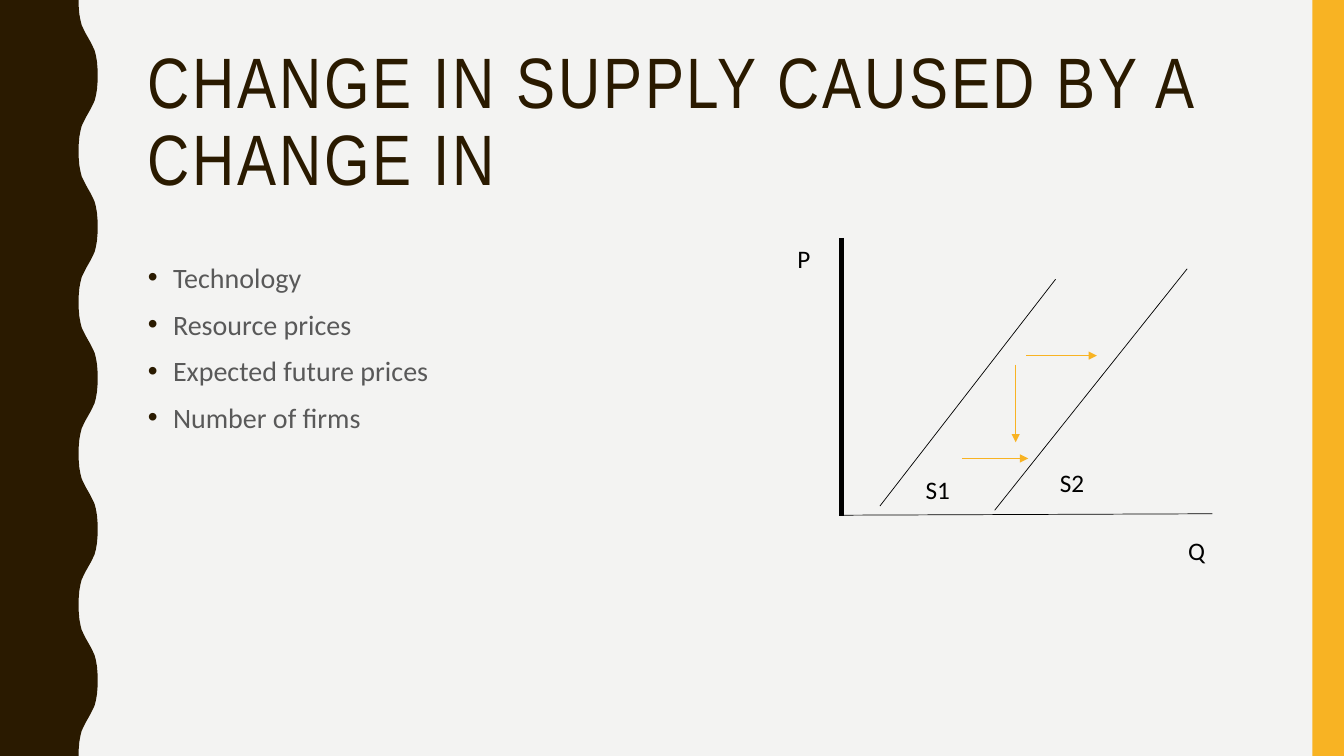
"""Build a slide on the causes of a change in supply, with its graph."""
from dataclasses import dataclass

import pptx
import pptx.dml.color
import pptx.enum.shapes
import pptx.enum.text
import pptx.oxml.ns
import pptx.util
from lxml import etree

Pt = pptx.util.Pt
qn = pptx.oxml.ns.qn
Anchor = pptx.enum.text.MSO_ANCHOR


@dataclass(frozen=True)
class Theme:
    ground: str = "F3F3F2"
    dark: str = "2A1A00"
    gold: str = "F8B323"
    grey: str = "595959"
    black: str = "000000"
    head: str = "Arial Narrow"
    body: str = "Calibri"
    large: int = 51
    mid: int = 20
    small: int = 18
    thin: float = 0.5
    thick: float = 4


THEME = Theme()
WIDTH, HEIGHT = 960, 540
CAUSES = ["Technology", "Resource prices", "Expected future prices",
          "Number of firms"]
LABELS = [("P", 562.5, 170, 24), ("Q", 841.5, 378.5, 27),
          ("S1", 654, 335.5, 32), ("S2", 750, 330.5, 32)]
CURVES = [(848, 192, 710.5, 364.5), (754, 199.5, 628.5, 361.5)]
ARROWS = [(687, 327.5, 734.5, 327.5), (733, 254, 783.5, 254),
          (725.5, 260.5, 725.5, 316)]
BEND = [(56.2, 0), (56.3, 5), (56.7, 10), (57.5, 14.5),
        (58.4, 18), (59.8, 21), (61.3, 24)]


def tint(code):
    """Turn a hex code into a colour."""
    return pptx.dml.color.RGBColor.from_string(code)


def paint(shape, code):
    """Fill a shape with a flat colour, without outline or shadow."""
    shape.shadow.inherit = False
    shape.fill.solid()
    shape.fill.fore_color.rgb = tint(code)
    shape.line.fill.background()


def add_wave(slide):
    """Draw the dark left band with its wavy edge."""
    half = BEND + [(63, 27)] + [(126 - x, 54 - y) for x, y in BEND[::-1]]
    wave = half + [(x, 108 - y) for x, y in half[-2::-1]]
    edge = [(x, y + 108 * turn) for turn in range(5) for x, y in wave]
    pen = slide.shapes.build_freeform(0, 0)
    pen.add_line_segments([(Pt(x), Pt(y)) for x, y in edge + [(0, HEIGHT)]])
    paint(pen.convert_to_shape(), THEME.dark)


def add_bar(slide):
    """Draw the gold bar on the right."""
    kind = pptx.enum.shapes.MSO_SHAPE.RECTANGLE
    bar = slide.shapes.add_shape(kind, Pt(937.5), 0, Pt(22.5), Pt(HEIGHT))
    paint(bar, THEME.gold)


def add_box(slide, left, top, width, height, wrap=True, anchor=Anchor.TOP):
    """Add a text box and return its frame."""
    box = slide.shapes.add_textbox(Pt(left), Pt(top), Pt(width), Pt(height))
    frame = box.text_frame
    frame.word_wrap = wrap
    frame.vertical_anchor = anchor
    return frame


def set_font(para, face, size, code):
    """Set face, size and colour of a paragraph."""
    para.font.name = face
    para.font.size = Pt(size)
    para.font.color.rgb = tint(code)


def add_title(slide, text):
    """Add the spaced title."""
    frame = add_box(slide, 98.5, 30, 801.5, 117.5, anchor=Anchor.MIDDLE)
    para = frame.paragraphs[0]
    run = para.add_run()
    run.text = text
    run._r.get_or_add_rPr().set("spc", "200")
    para.line_spacing = 0.9
    set_font(para, THEME.head, THEME.large, THEME.dark)


def add_bullet(para):
    """Give a paragraph a dark bullet and a hanging indent."""
    props = para._p.get_or_add_pPr()
    props.set("marL", str(Pt(18)))
    props.set("indent", str(-Pt(18)))
    shade = etree.SubElement(props, qn("a:buClr"))
    etree.SubElement(shade, qn("a:srgbClr"), val=THEME.dark)
    etree.SubElement(props, qn("a:buFont"), typeface="Arial")
    etree.SubElement(props, qn("a:buChar"), char="•")


def add_list(slide, items):
    """Add the bulleted list."""
    frame = add_box(slide, 98.5, 180, 801.5, 283)
    for rank, item in enumerate(items):
        para = frame.add_paragraph() if rank else frame.paragraphs[0]
        para.text = item
        add_bullet(para)
        para.line_spacing = 1.1
        if rank:
            para.space_before = Pt(7)
        set_font(para, THEME.body, THEME.mid, THEME.grey)


def add_label(slide, text, left, top, width):
    """Add a short label to the graph."""
    frame = add_box(slide, left, top, width, 29, wrap=False)
    frame.auto_size = pptx.enum.text.MSO_AUTO_SIZE.SHAPE_TO_FIT_TEXT
    para = frame.paragraphs[0]
    para.text = text
    set_font(para, THEME.body, THEME.small, THEME.black)


def add_line(slide, ends, code, width=THEME.thin, arrow=False):
    """Draw a straight line, with an arrowhead if asked."""
    kind = pptx.enum.shapes.MSO_CONNECTOR.STRAIGHT
    line = slide.shapes.add_connector(kind, *[Pt(end) for end in ends])
    line.line.color.rgb = tint(code)
    line.line.width = Pt(width)
    etree.SubElement(line._element.spPr, qn("a:effectLst"))
    if arrow:
        stroke = line.line._get_or_add_ln()
        etree.SubElement(stroke, qn("a:tailEnd"), type="triangle")


def add_graph(slide):
    """Draw axes, supply curves, labels and arrows."""
    add_line(slide, (601, 170, 601, 368.5), THEME.black, THEME.thick)
    add_line(slide, (600.5, 368, 866, 367), THEME.black)
    for ends in CURVES:
        add_line(slide, ends, THEME.black)
    for label in LABELS:
        add_label(slide, *label)
    for ends in ARROWS:
        add_line(slide, ends, THEME.gold, arrow=True)


def main():
    """Build and save the slide."""
    deck = pptx.Presentation()
    deck.slide_width, deck.slide_height = Pt(WIDTH), Pt(HEIGHT)
    slide = deck.slides.add_slide(deck.slide_layouts[6])
    slide.background.fill.solid()
    slide.background.fill.fore_color.rgb = tint(THEME.ground)
    add_wave(slide)
    add_bar(slide)
    add_title(slide, "CHANGE IN SUPPLY CAUSED BY A CHANGE IN")
    add_list(slide, CAUSES)
    add_graph(slide)
    deck.save("out.pptx")


if __name__ == "__main__":
    main()
